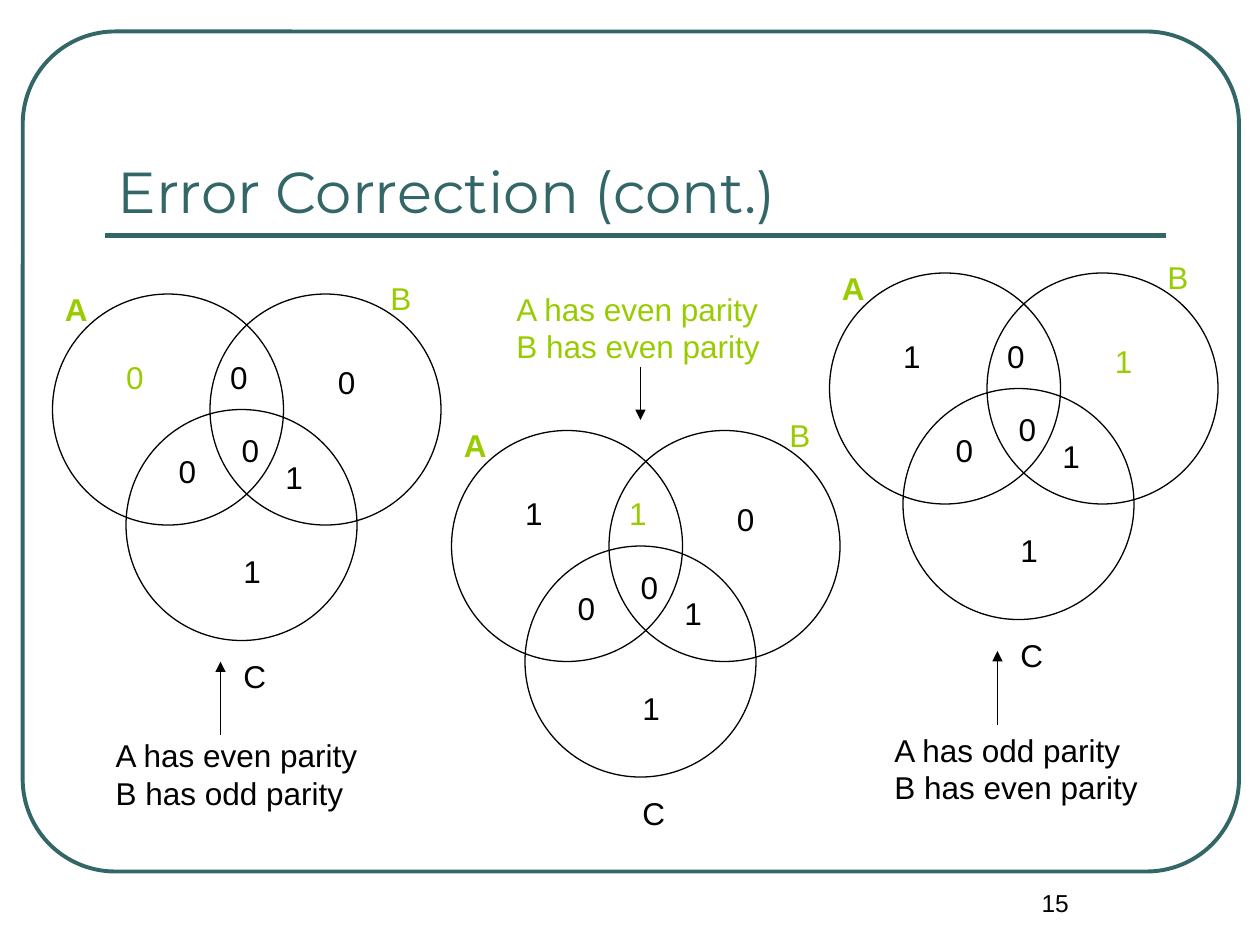
from lxml.etree import SubElement
from pptx import Presentation
from pptx.dml.color import RGBColor
from pptx.enum.shapes import MSO_CONNECTOR, MSO_SHAPE
from pptx.enum.text import MSO_ANCHOR, MSO_AUTO_SIZE, PP_ALIGN
from pptx.oxml.ns import qn
from pptx.util import Pt

COLORS = {
    "teal": RGBColor.from_string("336666"),
    "black": RGBColor.from_string("000000"),
    "green": RGBColor.from_string("99CC00"),
}

prs = Presentation()
prs.slide_width, prs.slide_height = Pt(720), Pt(540)
s = prs.slides.add_slide(prs.slide_layouts[5])


def add_text(text, x, y, w, h, color="black", bold=False, size=18):
    tb = s.shapes.add_textbox(Pt(x), Pt(y), Pt(w), Pt(h))
    tf = tb.text_frame
    tf.text = text
    tf.word_wrap = False
    tf.auto_size = MSO_AUTO_SIZE.SHAPE_TO_FIT_TEXT
    for p in tf.paragraphs:
        f = p.runs[0].font
        f.name, f.size, f.bold = "Arial", Pt(size), bold
        f.color.rgb = COLORS[color]
    return tf


def add_line(x1, y1, x2, y2, color, width):
    line = s.shapes.add_connector(MSO_CONNECTOR.STRAIGHT, Pt(x1), Pt(y1), Pt(x2), Pt(y2))
    line.line.color.rgb = COLORS[color]
    line.line.width = Pt(width)
    SubElement(line._element.spPr, qn("a:effectLst"))
    return line


# Frame, title and rule
frame = s.shapes.add_shape(MSO_SHAPE.ROUNDED_RECTANGLE, Pt(13), Pt(18), Pt(695), Pt(480))
frame.adjustments[0] = 0.11
frame.fill.background()
frame.line.color.rgb = COLORS["teal"]
frame.line.width = Pt(2.25)
frame.shadow.inherit = False

add_line(60, 134.5, 666, 134.5, "teal", 3)

title = s.shapes.title
title.left, title.top, title.width, title.height = Pt(60), Pt(42), Pt(606), Pt(90)
tf = title.text_frame
tf.text = "Error Correction (cont.)"
tf.vertical_anchor = MSO_ANCHOR.BOTTOM
tf.auto_size = MSO_AUTO_SIZE.NONE
p = tf.paragraphs[0]
p.alignment = PP_ALIGN.LEFT
f = p.runs[0].font
f.name, f.size = "Montserrat", Pt(33)
f.color.rgb = COLORS["teal"]

# Venn diagrams: every offset is from the top left of circle A
DIAMETER = 132
CIRCLES = [(0, 0), (90, 0), (42, 66)]
SET_LABELS = [("A", 0, -6, "green"), ("B", 186, -12, "green"), ("C", 102, 204, "black")]
REGIONS = {
    "A": (35, 33), "B": (156, 36), "C": (102, 144), "AB": (94.5, 33),
    "AC": (65, 87), "BC": (126, 90), "ABC": (101, 75),
}
# Origin, bits in the order of REGIONS, highlighted region
diagrams = [
    (30, 168, "0010010", "A"),
    (474, 156, "1110010", "B"),
    (258, 246, "1011010", "AB"),
]
for x, y, bits, flipped in diagrams:
    for dx, dy in CIRCLES:
        sp = s.shapes.add_shape(MSO_SHAPE.OVAL, Pt(x + dx), Pt(y + dy), Pt(DIAMETER), Pt(DIAMETER))
        sp.fill.background()
        sp.line.color.rgb = COLORS["black"]
        sp.line.width = Pt(0.75)
        sp.shadow.inherit = False
    for label, dx, dy, color in SET_LABELS:
        add_text(label, x + dx, y + dy, 27, 29, color, bold=label == "A")
    for (region, (dx, dy)), bit in zip(REGIONS.items(), bits):
        add_text(bit, x + dx, y + dy, 24.5, 29, "green" if region == flipped else "black")

# Parity notes with their arrows
notes = [
    ("A has even parity\nB has odd parity", 59, 417, "black", (126, 420, 378)),
    ("A has even parity\nB has even parity", 288, 162, "green", (366, 210, 240)),
    ("A has odd parity\nB has even parity", 504, 414, "black", (570, 414, 372)),
]
for text, x, y, color, (arrow_x, start, end) in notes:
    add_text(text, x, y, 153.5, 50.5, color)
    arrow = add_line(arrow_x, start, arrow_x, end, "black", 0.75)
    SubElement(arrow.line._get_or_add_ln(), qn("a:tailEnd"), type="triangle")

# Slide number
tf = add_text("15", 540, 504, 126, 36, size=14)
tf.word_wrap = True
tf.auto_size = MSO_AUTO_SIZE.NONE
tf.paragraphs[0].alignment = PP_ALIGN.CENTER

prs.save("out.pptx")
